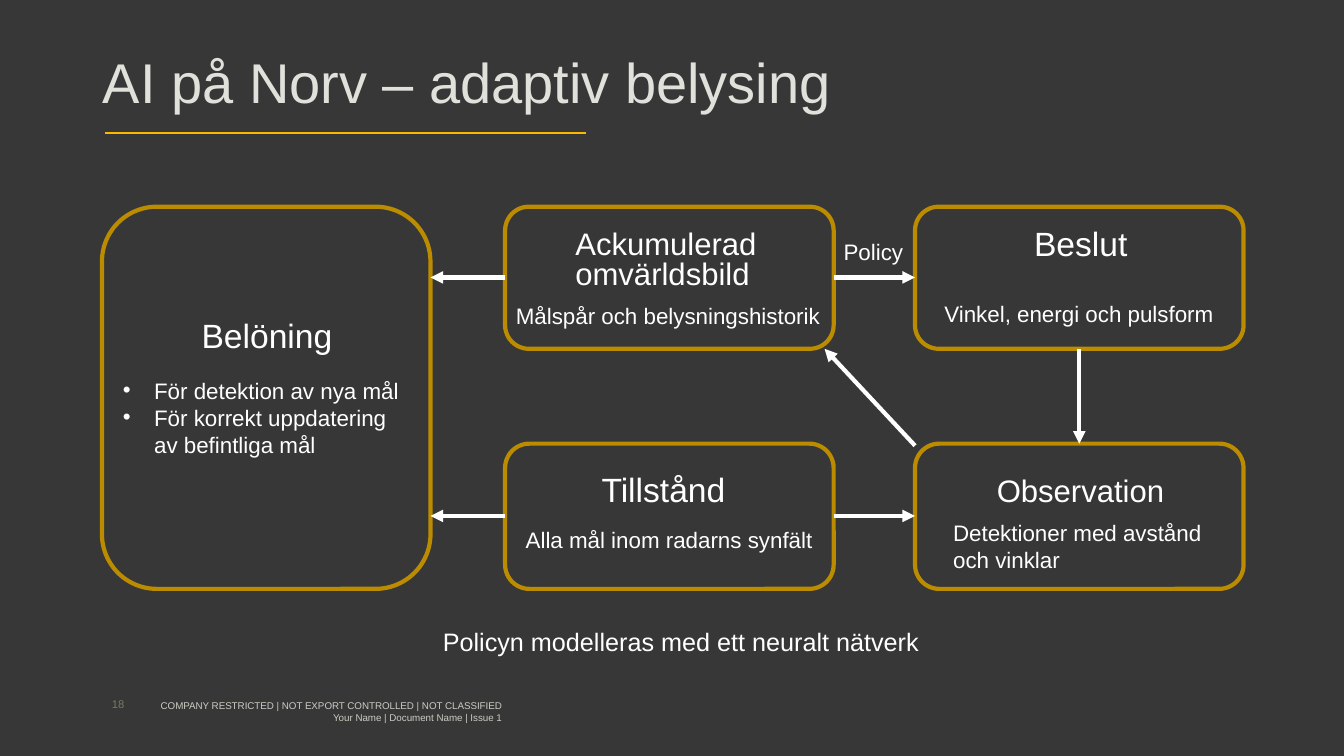
import pptx
import pptx.util
import pptx.dml.color
import pptx.enum.shapes
import pptx.enum.text
import pptx.oxml.ns
from lxml import etree

Cm, Pt = pptx.util.Cm, pptx.util.Pt
ALIGN = pptx.enum.text.PP_ALIGN
ANCHOR = pptx.enum.text.MSO_ANCHOR
COLORS = {"back": "373737", "card": "BB8B00", "rule": "FAB900", "title": "E1E1DC",
          "text": "FFFFFF", "footer": "CCCCC4", "number": "787867"}


def rgb(name):
    return pptx.dml.color.RGBColor.from_string(COLORS[name])


def sub(parent, tag, **attributes):
    return etree.SubElement(parent, pptx.oxml.ns.qn(tag), **attributes)


class Deck:
    """Holds the style and the current slide."""
    font = "Arial"

    def __init__(self, width, height):
        self.prs = pptx.Presentation()
        self.prs.slide_width, self.prs.slide_height = Cm(width), Cm(height)
        self.s = self.prs.slides.add_slide(self.prs.slide_layouts[1])
        self.s.background.fill.solid()
        self.s.background.fill.fore_color.rgb = rgb("back")

    def set_text(self, sp, lines, size, color="text", align=ALIGN.LEFT, spacing=1.0,
                 anchor=ANCHOR.TOP):
        tf = sp.text_frame
        tf.word_wrap = True
        tf.auto_size = pptx.enum.text.MSO_AUTO_SIZE.NONE
        tf.vertical_anchor = anchor
        for i, line in enumerate(lines):
            p = tf.paragraphs[0] if i == 0 else tf.add_paragraph()
            p.alignment, p.line_spacing, p.space_before = align, spacing, Pt(0)
            r = p.add_run()
            r.text = line
            r.font.name, r.font.size = self.font, Pt(size)
            r.font.color.rgb = rgb(color)
        return tf

    def place(self, sp, box):
        sp.left, sp.top, sp.width, sp.height = map(Cm, box)

    def title(self, text, box):
        sp = self.s.shapes.title
        self.place(sp, box)
        self.set_text(sp, [text], 40, "title", spacing=0.9, anchor=ANCHOR.MIDDLE)

    def bullets(self, lines, box, size):
        sp = self.s.placeholders[1]
        self.place(sp, box)
        sp.element.getparent().append(sp.element)  # in front of the cards
        for p in self.set_text(sp, lines, size).paragraphs:
            pPr = p._p.get_or_add_pPr()
            pPr.set("marL", str(Cm(0.79)))
            pPr.set("indent", str(-Cm(0.79)))
            sub(pPr, "a:buFont", typeface=self.font)
            sub(pPr, "a:buChar", char="•")

    def text(self, lines, box, size, **style):
        return self.set_text(self.s.shapes.add_textbox(*map(Cm, box)), lines, size, **style)

    def card(self, box):
        sp = self.s.shapes.add_shape(
            pptx.enum.shapes.MSO_SHAPE.ROUNDED_RECTANGLE, *map(Cm, box))
        sp.shadow.inherit = False
        sp.fill.solid()
        sp.fill.fore_color.rgb = rgb("back")
        sp.line.color.rgb = rgb("card")
        sp.line.width = Pt(3)

    def line(self, ends, color, width, arrow=False):
        cxn = self.s.shapes.add_connector(
            pptx.enum.shapes.MSO_CONNECTOR.STRAIGHT, *map(Cm, ends))
        cxn.line.color.rgb = rgb(color)
        cxn.line.width = Pt(width)
        spPr = cxn.element.spPr
        if arrow:
            sub(spPr.find(pptx.oxml.ns.qn("a:ln")), "a:tailEnd", type="triangle")
        sub(spPr, "a:effectLst")


def main():
    deck = Deck(33.87, 19.05)

    # Title and rule
    deck.title("AI på Norv – adaptiv belysing", (2.34, 0.3, 28.6, 3.68))
    deck.line((2.64, 3.35, 14.76, 3.35), "rule", 1.5)

    # Cards: three columns, two rows, the first column spanning both
    reward, middle, right = 2.57, 12.73, 23.06
    width, top, low = 8.28, 5.21, 11.18
    top_height, low_height = 3.58, 3.66
    deck.card((reward, top, width, low + low_height - top))
    for x in (middle, right):
        deck.card((x, top, width, top_height))
        deck.card((x, low, width, low_height))

    # Arrows
    top_mid, low_mid = 6.99, 13.0
    center = right + width / 2
    for y in (top_mid, low_mid):
        deck.line((middle, y, reward + width, y), "text", 3, arrow=True)
        deck.line((middle + width, y, right, y), "text", 3, arrow=True)
    deck.line((center, top + top_height, center, low), "text", 3, arrow=True)
    deck.line((right, 11.23, 20.78, top + top_height), "text", 3, arrow=True)

    # Card headings
    for heading, x, y, w, size, spacing in (
            ("Belöning", 4.83, 7.82, 4.67, 24, 1.0),
            ("Ackumulerad omvärldsbild", 14.25, 5.72, 7.54, 22.2, 0.8),
            ("Beslut", 25.81, 5.49, 3.94, 24, 1.0),
            ("Tillstånd", 14.91, 11.68, 3.94, 24, 1.0),
            ("Observation", 24.87, 11.76, 4.95, 22.2, 1.0)):
        deck.text([heading], (x, y, w, 1.88), size, spacing=spacing)

    # Card descriptions and the arrow label
    for note, x, y, w in (
            ("Målspår och belysningshistorik", 12.75, 7.49, 8.81),
            ("Vinkel, energi och pulsform", 23.55, 7.44, 8.81),
            ("Alla mål inom radarns synfält", 13.0, 13.13, 7.77),
            ("Detektioner med avstånd och vinklar", 23.77, 12.95, 7.57),
            ("Policy", 21.01, 5.87, 2.11)):
        deck.text([note], (x, y, w, 1.88), 16)
    deck.bullets(["För detektion av nya mål",
                  "För korrekt uppdatering av befintliga mål"],
                 (2.84, 9.37, 7.57, 2.31), 16)

    # Conclusion
    deck.text(["Policyn modelleras med ett neuralt nätverk"],
              (4.7, 15.65, 24.92, 1.63), 18, align=ALIGN.CENTER)

    # Footer
    deck.text(["18"], (2.57, 17.45, 4.65, 1.02), 8, color="number")
    tf = deck.text(["COMPANY RESTRICTED | NOT EXPORT CONTROLLED | NOT CLASSIFIED",
                    "Your Name | Document Name | Issue 1"],
                   (2.97, 17.45, 9.68, 0.97), 7, color="footer",
                   align=ALIGN.RIGHT, anchor=ANCHOR.MIDDLE)
    tf.margin_left = tf.margin_right = tf.margin_top = tf.margin_bottom = 0

    deck.prs.save("out.pptx")


if __name__ == "__main__":
    main()
